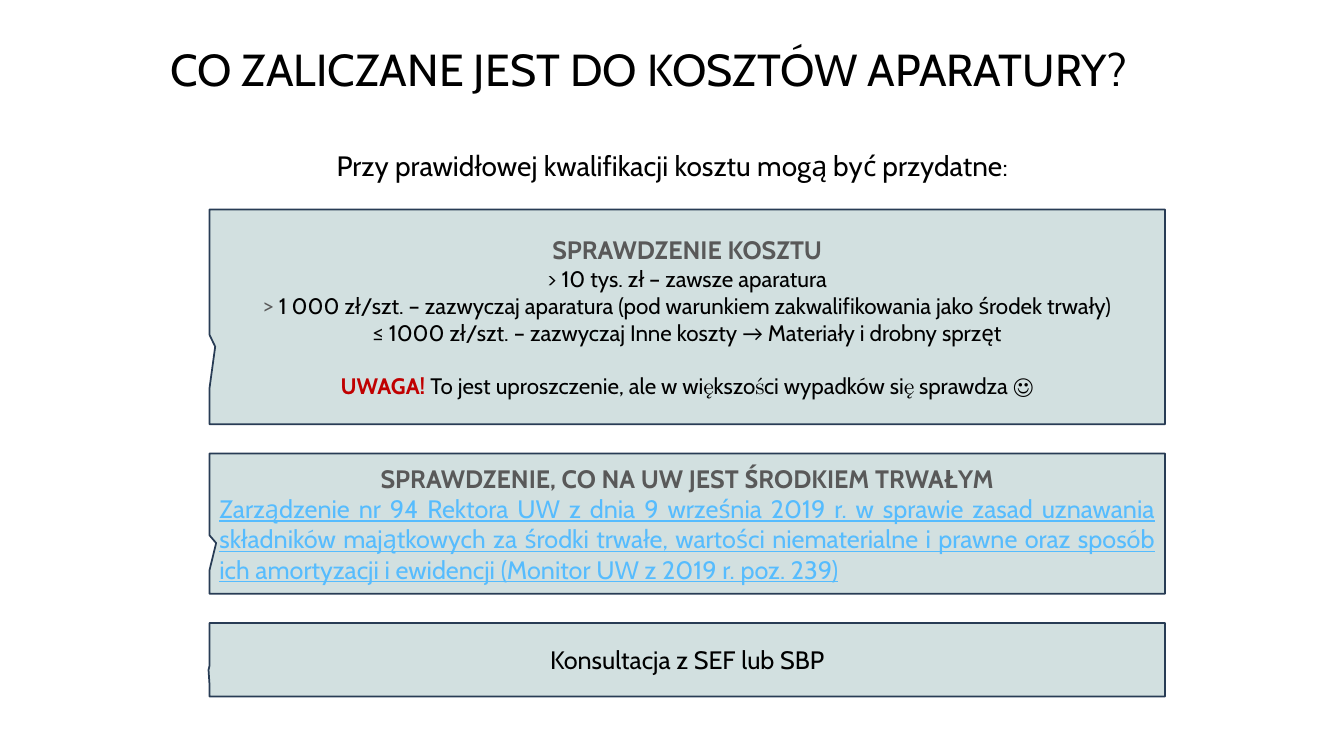
"""Build the slide on classifying equipment costs."""
import dataclasses

import pptx
import pptx.dml.color
import pptx.enum.shapes
import pptx.enum.text
import pptx.oxml
import pptx.oxml.ns
import pptx.util

Cm = pptx.util.Cm
Pt = pptx.util.Pt
ALIGN = pptx.enum.text.PP_ALIGN
ANCHOR = pptx.enum.text.MSO_ANCHOR


@dataclasses.dataclass(frozen=True)
class Theme:
    """Hold the fonts, colours and sizes of the slide."""
    font: str = "Cabin"
    symbol_font: str = "Calibri"
    black: str = "000000"
    grey: str = "595959"
    red: str = "C00000"
    link: str = "56BCFE"
    fill: str = "D2E0E0"
    outline: str = "283C55"
    title: float = 32
    lead: float = 20
    heading: float = 18
    detail: float = 16
    line: float = 1.25


THEME = Theme()


def rgb(value):
    """Turn a hex string into a colour."""
    return pptx.dml.color.RGBColor.from_string(value)


def style(r, size, color=THEME.black, bold=False, font=THEME.font, underline=None):
    """Format one run."""
    r.font.name = font
    r.font.size = Pt(size)
    r.font.bold = bold
    r.font.underline = underline
    r.font.color.rgb = rgb(color)


def write(p, runs, align=ALIGN.CENTER, before=0):
    """Fill a paragraph with pairs of text and run format."""
    p.alignment = align
    p.space_before = Pt(before)
    for text, look in runs:
        r = p.add_run()
        r.text = text
        style(r, **look)


def place(sp, left, top, width, height):
    """Move and size a shape in centimetres."""
    sp.left, sp.top, sp.width, sp.height = map(Cm, (left, top, width, height))


def add_title(s, text):
    """Fill and format the title placeholder."""
    sp = s.shapes.title
    place(sp, 1.52, 0.48, 29.69, 1.7)
    tf = sp.text_frame
    tf.text = text
    tf.auto_size = pptx.enum.text.MSO_AUTO_SIZE.NONE
    tf.vertical_anchor = ANCHOR.TOP
    tf.margin_left = tf.margin_right = tf.margin_bottom = 0
    tf.margin_top = Cm(0.2)
    p = tf.paragraphs[0]
    p.alignment = ALIGN.CENTER
    p.line_spacing = Pt(49)
    style(p.runs[0], THEME.title)


def add_lead(s, runs):
    """Fill and format the body placeholder as a plain line."""
    sp = s.placeholders[1]
    place(sp, 8.23, 3.61, 20, 1.12)
    tf = sp.text_frame
    tf.auto_size = pptx.enum.text.MSO_AUTO_SIZE.NONE
    p = tf.paragraphs[0]
    pPr = p._p.get_or_add_pPr()
    pPr.set("marL", "0")
    pPr.set("indent", "0")
    pPr.append(pptx.oxml.parse_xml(f'<a:buNone {pptx.oxml.ns.nsdecls("a")}/>'))
    write(p, runs, ALIGN.LEFT)


def add_callout(s, top, height, tip, paragraphs):
    """Add a callout with its tip on the left edge."""
    sp = s.shapes.add_shape(
        pptx.enum.shapes.MSO_SHAPE.RECTANGULAR_CALLOUT,
        Cm(5.28), Cm(top), Cm(24.08), Cm(height))
    sp.adjustments[0], sp.adjustments[1] = tip, 0.139
    sp.shadow.inherit = False
    sp.fill.solid()
    sp.fill.fore_color.rgb = rgb(THEME.fill)
    sp.line.color.rgb = rgb(THEME.outline)
    sp.line.width = Pt(THEME.line)
    tf = sp.text_frame
    tf.word_wrap = True
    tf.vertical_anchor = ANCHOR.MIDDLE
    for i, options in enumerate(paragraphs):
        write(tf.paragraphs[0] if i == 0 else tf.add_paragraph(), **options)


def main():
    """Build and save the presentation."""
    prs = pptx.Presentation()
    prs.slide_width, prs.slide_height = Cm(33.87), Cm(19.05)
    s = prs.slides.add_slide(prs.slide_layouts[1])

    heading = dict(size=THEME.heading, color=THEME.grey, bold=True)
    plain = dict(size=THEME.heading)
    detail = dict(size=THEME.detail)
    symbol = dict(size=THEME.detail, font=THEME.symbol_font)
    grey_symbol = dict(symbol, color=THEME.grey)
    warning = dict(size=THEME.detail, color=THEME.red, bold=True)
    link = dict(size=THEME.heading, color=THEME.link, underline=True)

    cost_check = [
        dict(runs=[("SPRAWDZENIE KOSZTU", heading)]),
        dict(runs=[("> 10 tys. zł – zawsze aparatura", detail)]),
        dict(runs=[(">", grey_symbol),
                   (" 1 000 zł/szt. – zazwyczaj aparatura (pod warunkiem "
                    "zakwalifikowania jako środek trwały)", detail)]),
        dict(runs=[("≤", symbol),
                   (" 1000 zł/szt. – zazwyczaj Inne koszty ", detail),
                   ("→ ", symbol),
                   ("Materiały i drobny sprzęt", detail)]),
        dict(runs=[("UWAGA! ", warning),
                   ("To jest uproszczenie, ale w większości wypadków "
                    "się sprawdza ☺", detail)], before=19),
    ]
    asset_check = [
        dict(runs=[("SPRAWDZENIE, CO NA UW JEST ŚRODKIEM TRWAŁYM", heading)]),
        dict(runs=[("Zarządzenie nr 94 Rektora UW z dnia 9 września 2019 r. "
                    "w sprawie zasad uznawania składników majątkowych za środki "
                    "trwałe, wartości niematerialne i prawne oraz sposób ich "
                    "amortyzacji i ewidencji (Monitor UW z 2019 r. poz. 239)",
                    link)], align=ALIGN.JUSTIFY),
    ]
    consultation = [dict(runs=[("Konsultacja z SEF lub SBP", plain)])]

    add_title(s, "CO ZALICZANE JEST DO KOSZTÓW APARATURY?")
    add_lead(s, [
        ("Przy prawidłowej kwalifikacji kosztu mogą być przydatne",
         dict(size=THEME.lead)),
        (":", plain)])
    top, gap = 5.28, 0.74
    for height, tip, paragraphs in (
            (5.41, -0.494, cost_check),
            (3.53, -0.493, asset_check),
            (1.85, -0.501, consultation)):
        add_callout(s, top, height, tip, paragraphs)
        top += height + gap

    prs.save("out.pptx")


if __name__ == "__main__":
    main()
